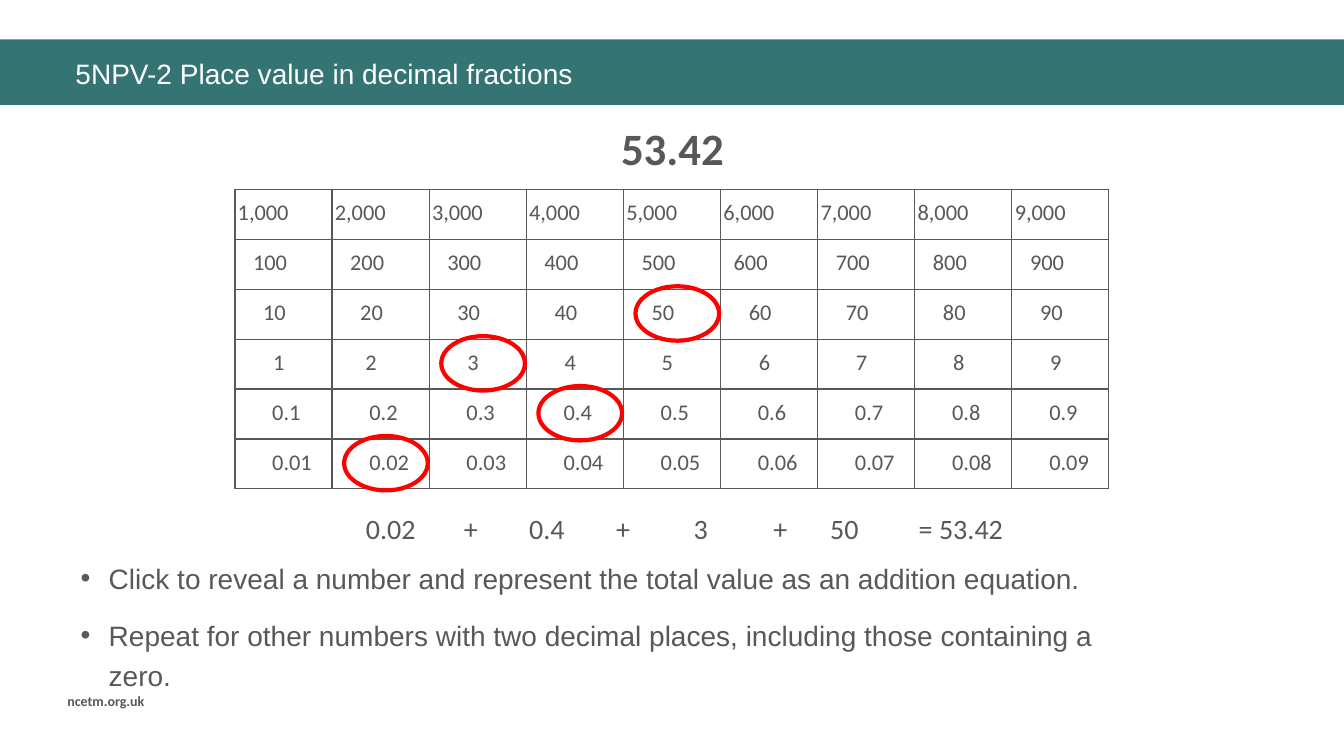
from lxml import etree
from pptx import Presentation
from pptx.dml.color import RGBColor
from pptx.enum.shapes import MSO_SHAPE
from pptx.enum.text import PP_ALIGN
from pptx.oxml.ns import qn
from pptx.util import Inches, Pt

RECTANGLE, OVAL = MSO_SHAPE.RECTANGLE, MSO_SHAPE.OVAL
LEFT, CENTER = PP_ALIGN.LEFT, PP_ALIGN.CENTER

TEAL = RGBColor(0x34, 0x75, 0x74)
GREY = RGBColor(0x58, 0x58, 0x58)
RED = RGBColor(0xFF, 0x00, 0x00)
WHITE = RGBColor(0xFF, 0xFF, 0xFF)

CHART_LEFT, CHART_TOP, CHART_WIDTH, CHART_HEIGHT = 2.33, 1.88, 8.67, 2.97
COLUMNS, ROWS = 9, 6
COLUMN_WIDTH, ROW_HEIGHT = CHART_WIDTH / COLUMNS, CHART_HEIGHT / ROWS

# Number pattern, box offset from the column edge, box width, text indent
PLACE_VALUES = [
    ("{},000", -0.07, 0.76, 0),
    ("{}00", -0.07, 0.76, 0.15),
    ("{}0", -0.07, 0.77, 0.25),
    ("{}", -0.07, 0.77, 0.35),
    ("0.{}", -0.03, 0.89, 0.3),
    ("0.0{}", -0.03, 1.02, 0.3),
]
OUTDENTED = {"2": 0.05, "600": 0.05}

# Row and column of each ringed number
RINGED = [(4, 3), (5, 1), (3, 2), (2, 4)]

# Text, left, width
EQUATION = [
    ("0.02", 3.5, 0.75),
    ("+", 4.49, 0.36),
    ("0.4", 5.13, 0.59),
    ("+", 6, 0.36),
    ("3", 6.77, 0.36),
    ("+", 7.56, 0.36),
    ("50", 8.12, 0.51),
    ("= 53.42", 8.79, 1.48),
]

INSTRUCTIONS = [
    "Click to reveal a number and represent the total value as an addition equation.",
    "Repeat for other numbers with two decimal places, including those containing a zero.",
]


def style(paragraph, size, font="Calibri", color=GREY, bold=False):
    paragraph.font.size = Pt(size)
    paragraph.font.name = font
    paragraph.font.color.rgb = color
    paragraph.font.bold = bold


def add_text(slide, text, left, top, width, height, size, align=LEFT, indent=0, **font):
    box = slide.shapes.add_textbox(Inches(left), Inches(top), Inches(width), Inches(height))
    frame = box.text_frame
    frame.word_wrap = True
    frame.margin_left = Inches(0.1 + indent)
    paragraph = frame.paragraphs[0]
    paragraph.text = text
    paragraph.alignment = align
    style(paragraph, size, **font)


def add_title_bar(slide, text):
    bar = slide.shapes.add_shape(RECTANGLE, 0, Inches(0.39), Inches(13.33), Inches(0.65))
    bar.shadow.inherit = False
    bar.fill.solid()
    bar.fill.fore_color.rgb = TEAL
    bar.line.fill.background()
    add_text(slide, text, 0.65, 0.51, 12.32, 0.47, 20, font="Arial", color=WHITE)


def add_bullets(slide, texts):
    box = slide.shapes.add_textbox(Inches(0.7), Inches(5.45), Inches(10.59), Inches(1.04))
    frame = box.text_frame
    frame.word_wrap = True
    for index, text in enumerate(texts):
        paragraph = frame.add_paragraph() if index else frame.paragraphs[0]
        paragraph.text = text
        properties = paragraph._p.get_or_add_pPr()
        properties.set("marL", str(Inches(0.28)))
        properties.set("indent", str(-Inches(0.28)))
        etree.SubElement(properties, qn("a:buFont"), typeface="Arial")
        etree.SubElement(properties, qn("a:buChar"), char="•")
        paragraph.line_spacing = 1.2
        paragraph.space_before = Pt(6 if index else 0)
        paragraph.space_after = Pt(6)
        style(paragraph, 20, font="Arial")


def set_borders(cell):
    properties = cell._tc.get_or_add_tcPr()
    for side in ("lnL", "lnR", "lnT", "lnB"):
        line = etree.SubElement(properties, qn(f"a:{side}"), w=str(Pt(1)))
        fill = etree.SubElement(line, qn("a:solidFill"))
        etree.SubElement(fill, qn("a:srgbClr"), val=str(GREY))


def add_grid(slide):
    table = slide.shapes.add_table(
        ROWS, COLUMNS, Inches(CHART_LEFT), Inches(CHART_TOP),
        Inches(CHART_WIDTH), Inches(CHART_HEIGHT)).table
    table.first_row = False
    table.horz_banding = False
    for cell in table.iter_cells():
        set_borders(cell)
        cell.fill.background()


def add_numbers(slide):
    for row, (pattern, offset, width, indent) in enumerate(PLACE_VALUES):
        for column in range(COLUMNS):
            number = pattern.format(column + 1)
            add_text(slide, number,
                     CHART_LEFT + column * COLUMN_WIDTH + offset,
                     CHART_TOP + row * ROW_HEIGHT + 0.04,
                     width, 0.37, 16, indent=indent - OUTDENTED.get(number, 0))


def add_ring(slide, row, column):
    ring = slide.shapes.add_shape(
        OVAL,
        Inches(CHART_LEFT + column * COLUMN_WIDTH + 0.12),
        Inches(CHART_TOP + row * ROW_HEIGHT - 0.03),
        Inches(0.83), Inches(0.54))
    ring.shadow.inherit = False
    ring.fill.background()
    ring.line.color.rgb = RED
    ring.line.width = Pt(3)


def main():
    presentation = Presentation()
    presentation.slide_width = Inches(13.33)
    presentation.slide_height = Inches(7.5)
    slide = presentation.slides.add_slide(presentation.slide_layouts[6])

    add_title_bar(slide, "5NPV-2 Place value in decimal fractions")
    add_text(slide, "ncetm.org.uk", 0.57, 6.82, 1.21, 0.27, 10, bold=True)
    add_text(slide, "53.42", 6.01, 1.15, 1.32, 0.64, 32, align=CENTER, bold=True)
    add_bullets(slide, INSTRUCTIONS)
    for text, left, width in EQUATION:
        add_text(slide, text, left, 5.03, width, 0.44, 20, align=CENTER)
    add_grid(slide)
    add_numbers(slide)
    for row, column in RINGED:
        add_ring(slide, row, column)

    presentation.save("out.pptx")


if __name__ == "__main__":
    main()
